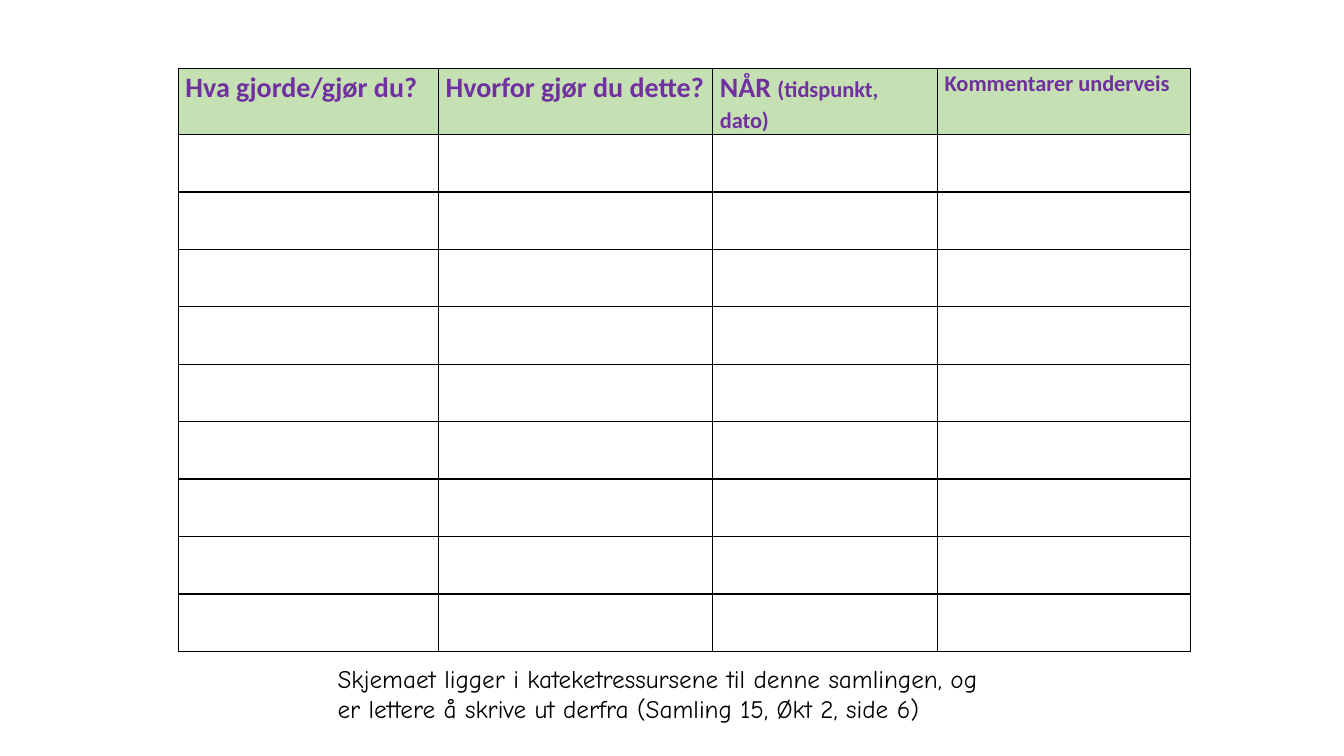
"""Build a slide with an empty activity log table and a note below it."""
from lxml import etree
from pptx import Presentation
from pptx.dml.color import RGBColor
from pptx.enum.text import MSO_AUTO_SIZE
from pptx.oxml.ns import qn
from pptx.util import Inches, Pt

GROW = MSO_AUTO_SIZE.SHAPE_TO_FIT_TEXT
BLANK_LAYOUT = 6
COLORS = {"heading": "7030A0", "header_fill": "C5E0B3", "line": "000000", "note": "000000"}
COLUMN_WIDTHS = [2.58, 2.72, 2.23, 2.51]
ROW_COUNT = 10
ROW_HEIGHT = 0.57
HEADINGS = [
    [("Hva gjorde/gjør du?", 20)],
    [("Hvorfor gjør du dette?", 20)],
    [("NÅR ", 20), ("(tidspunkt, dato)", 16)],
    [("Kommentarer underveis", 16)],
]
NOTE = (
    "Skjemaet ligger i kateketressursene til denne samlingen, "
    "og er lettere å skrive ut derfra (Samling 15, Økt 2, side 6)"
)
HEADER_MARGINS = {"margin_left": 0.07, "margin_top": 0, "margin_right": 0.07, "margin_bottom": 0}


def add_run(paragraph, text, color, **font_values):
    run = paragraph.add_run()
    run.text = text
    run.font.color.rgb = RGBColor.from_string(color)
    for name, value in font_values.items():
        setattr(run.font, name, value)


def add_borders(cell):
    properties = cell._tc.get_or_add_tcPr()
    for position, side in enumerate(("a:lnL", "a:lnR", "a:lnT", "a:lnB")):
        line = etree.Element(qn(side), w=str(Pt(1)))
        fill = etree.SubElement(line, qn("a:solidFill"))
        etree.SubElement(fill, qn("a:srgbClr"), val=COLORS["line"])
        properties.insert(position, line)


presentation = Presentation()
presentation.slide_width = Inches(13.33)
presentation.slide_height = Inches(7.5)
slide = presentation.slides.add_slide(presentation.slide_layouts[BLANK_LAYOUT])

table = slide.shapes.add_table(
    ROW_COUNT, len(COLUMN_WIDTHS), Inches(1.77), Inches(0.68),
    Inches(sum(COLUMN_WIDTHS)), Inches(ROW_COUNT * ROW_HEIGHT),
).table
table.first_row = False
table.horz_banding = False
for column, width in zip(table.columns, COLUMN_WIDTHS):
    column.width = Inches(width)
for row in table.rows:
    row.height = Inches(ROW_HEIGHT)

for cell in table.iter_cells():
    cell.fill.background()
    add_borders(cell)

for cell, heading in zip(table.rows[0].cells, HEADINGS):
    cell.fill.solid()
    cell.fill.fore_color.rgb = RGBColor.from_string(COLORS["header_fill"])
    for name, value in HEADER_MARGINS.items():
        setattr(cell, name, Inches(value))
    paragraph = cell.text_frame.paragraphs[0]
    paragraph.line_spacing = 1.07
    for text, size in heading:
        add_run(paragraph, text, COLORS["heading"], name="Calibri", size=Pt(size), bold=True)

note_box = slide.shapes.add_textbox(Inches(3.25), Inches(6.53), Inches(6.83), Inches(0.4))
note_frame = note_box.text_frame
note_frame.word_wrap = True
note_frame.auto_size = GROW
add_run(note_frame.paragraphs[0], NOTE, COLORS["note"], name="Comic Neue", size=Pt(18))

presentation.save("out.pptx")
